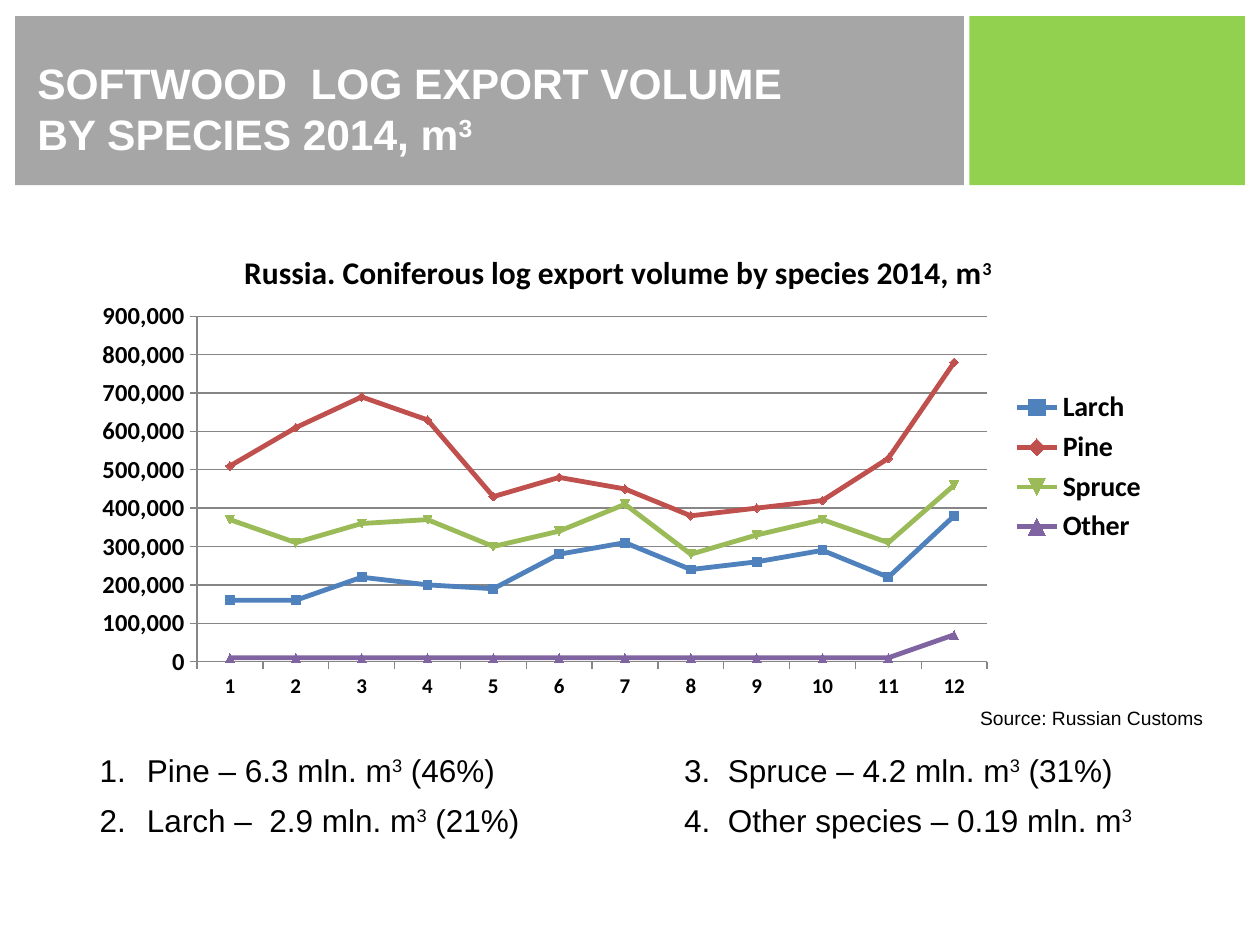
from lxml import etree
from pptx import Presentation
from pptx.chart.data import CategoryChartData
from pptx.dml.color import RGBColor as RGB
from pptx.enum.chart import XL_CHART_TYPE as Kind, XL_LEGEND_POSITION as Legend, XL_TICK_MARK as Tick
from pptx.enum.shapes import MSO_SHAPE as Shape
from pptx.enum.text import MSO_ANCHOR as Anchor, PP_ALIGN as Align
from pptx.oxml import parse_xml
from pptx.oxml.ns import nsdecls, qn
from pptx.util import Pt

COLORS = {
    "gray": "A6A6A6", "green": "92D050", "white": "FFFFFF", "black": "000000",
    "grid": "868686", "Larch": "4F81BD", "Pine": "C0504D",
    "Spruce": "9BBB59", "Other": "8064A2",
}
VOLUMES = {  # thousand cubic metres a month
    "Larch": [160, 160, 220, 200, 190, 280, 310, 240, 260, 290, 220, 380],
    "Pine": [510, 610, 690, 630, 430, 480, 450, 380, 400, 420, 530, 780],
    "Spruce": [370, 310, 360, 370, 300, 340, 410, 280, 330, 370, 310, 460],
    "Other": [10] * 11 + [70],
}


def color(name):
    return RGB.from_string(COLORS[name])


def style(font, size, bold=False, tint="black", face="Arial"):
    looks = {"size": Pt(size), "bold": bold, "name": face}
    for key, value in looks.items():
        setattr(font, key, value)
    font.color.rgb = color(tint)


def write(para, text, **look):
    """Add text in which the part after ^ is one raised character."""
    head, mark, tail = text.partition("^")
    for part, high in ((head, False), (tail[:1], True), (tail[1:], False)):
        if part:
            run = para.add_run()
            run.text = part
            style(run.font, **look)
            if high:
                run.font._element.set("baseline", "30000")


def add_box(slide, box, inset=(7.2, 3.6), wrap=True):
    frame = slide.shapes.add_textbox(*map(Pt, box)).text_frame
    frame.word_wrap = wrap
    frame.margin_left = frame.margin_right = Pt(inset[0])
    frame.margin_top = frame.margin_bottom = Pt(inset[1])
    return frame


def add_header(slide, box, lines):
    left, top, width, height = box
    gap, side = 3, 157.5
    main = width - side - gap
    for x, w, tint in ((left, main, "gray"), (left + main + gap, side, "green")):
        panel = slide.shapes.add_shape(Shape.RECTANGLE, Pt(x), Pt(top), Pt(w), Pt(height))
        panel.shadow.inherit = False
        panel.fill.solid()
        panel.fill.fore_color.rgb = color(tint)
        panel.line.fill.background()
    frame = add_box(slide, (left + 5.7, top + 5.8, main - 15, 79))
    frame.vertical_anchor = Anchor.BOTTOM
    para = frame.paragraphs[0]
    para.line_spacing = Pt(29)
    for i, line in enumerate(lines):
        if i:
            para.add_line_break()
        write(para, line, size=24.3, bold=True, tint="white")


def set_layout(part, inner=False, **places):
    """Fix the place of a plot or title as fractions of the chart."""
    for old in part.findall(qn("c:layout")):
        part.remove(old)
    layout = parse_xml(f"<c:layout {nsdecls('c')}><c:manualLayout/></c:layout>")
    tags = [("layoutTarget", "inner")] if inner else []
    tags += [("xMode", "edge"), ("yMode", "edge"), *places.items()]
    for tag, value in tags:
        etree.SubElement(layout[0], qn(f"c:{tag}")).set("val", str(value))
    text = part.find(qn("c:tx"))
    part.insert(0 if text is None else 1, layout)


def add_lines(slide, box, title):
    data = CategoryChartData(number_format="#,##0")
    data.categories = [str(month) for month in range(1, 13)]
    for name, values in VOLUMES.items():
        data.add_series(name, [value * 1000 for value in values])
    chart = slide.shapes.add_chart(Kind.LINE, *map(Pt, box), data).chart
    style(chart.font, 10, face="Calibri")

    chart.has_title = True
    write(chart.chart_title.text_frame.paragraphs[0], title,
          size=18, bold=True, face="Calibri")
    chart.chart_title.include_in_layout = False
    set_layout(chart.chart_title._element, x=0.15, y=0.05)
    set_layout(chart._chartSpace.chart.plotArea, inner=True, x=0.11, y=0.19, w=0.73, h=0.71)

    chart.has_legend = True
    chart.legend.position = Legend.RIGHT
    chart.legend.include_in_layout = False
    style(chart.legend.font, 16, True, face="Calibri")

    scale = chart.value_axis
    for axis, size in ((chart.category_axis, 12), (scale, 14)):
        axis.major_tick_mark = Tick.OUTSIDE
        style(axis.tick_labels.font, size, True, face="Calibri")
    scale.minimum_scale, scale.maximum_scale, scale.major_unit = 0, 900000, 100000
    scale.tick_labels.number_format = "#,##0"
    scale.tick_labels.number_format_is_linked = False
    scale.has_major_gridlines = True
    for rule in (chart.category_axis.format, scale.format, scale.major_gridlines.format):
        rule.line.color.rgb = color("grid")
        rule.line.width = Pt(0.75)

    chart.plots[0].vary_by_categories = False
    for series in chart.plots[0].series:
        series.smooth = False
        series.marker.style = None
        series.format.line.color.rgb = color(series.name)
        series.format.line.width = Pt(2.75)


def add_list(slide, box, items, start, indent):
    frame = add_box(slide, box, inset=(3, 0))
    for i, item in enumerate(items):
        para = frame.paragraphs[0] if i == 0 else frame.add_paragraph()
        para.alignment = Align.JUSTIFY
        para.space_before = Pt(7 if i else 0)
        props = para._p.get_or_add_pPr()
        props.set("marL", str(Pt(indent)))
        props.set("indent", str(-Pt(indent)))
        etree.SubElement(props, qn("a:buFont")).set("typeface", "Arial")
        number = etree.SubElement(props, qn("a:buAutoNum"))
        number.set("type", "arabicPeriod")
        number.set("startAt", str(start))
        write(para, item, size=18)


def add_source(slide, box, text):
    write(add_box(slide, box, wrap=False).paragraphs[0], text, size=11)


def main():
    deck = Presentation()
    deck.slide_width, deck.slide_height = Pt(720), Pt(540)
    slide = deck.slides.add_slide(deck.slide_layouts[6])
    add_header(slide, (8.6, 9.3, 702.8, 96.5),
               ["SOFTWOOD  LOG EXPORT VOLUME", "BY SPECIES 2014, m^3"])
    add_lines(slide, (44.6, 128, 618.5, 278),
              "Russia. Coniferous log export volume by species 2014, m^3")
    add_list(slide, (54, 429, 266, 77),
             ["Pine – 6.3 mln. m^3 (46%)", "Larch –  2.9 mln. m^3 (21%)"], 1, 27)
    add_list(slide, (388, 429, 266, 50),
             ["Spruce – 4.2 mln. m^3 (31%)", "Other species – 0.19 mln. m^3"], 3, 25)
    add_source(slide, (553, 400, 142.5, 21), "Source: Russian Customs")
    deck.save("out.pptx")


if __name__ == "__main__":
    main()
